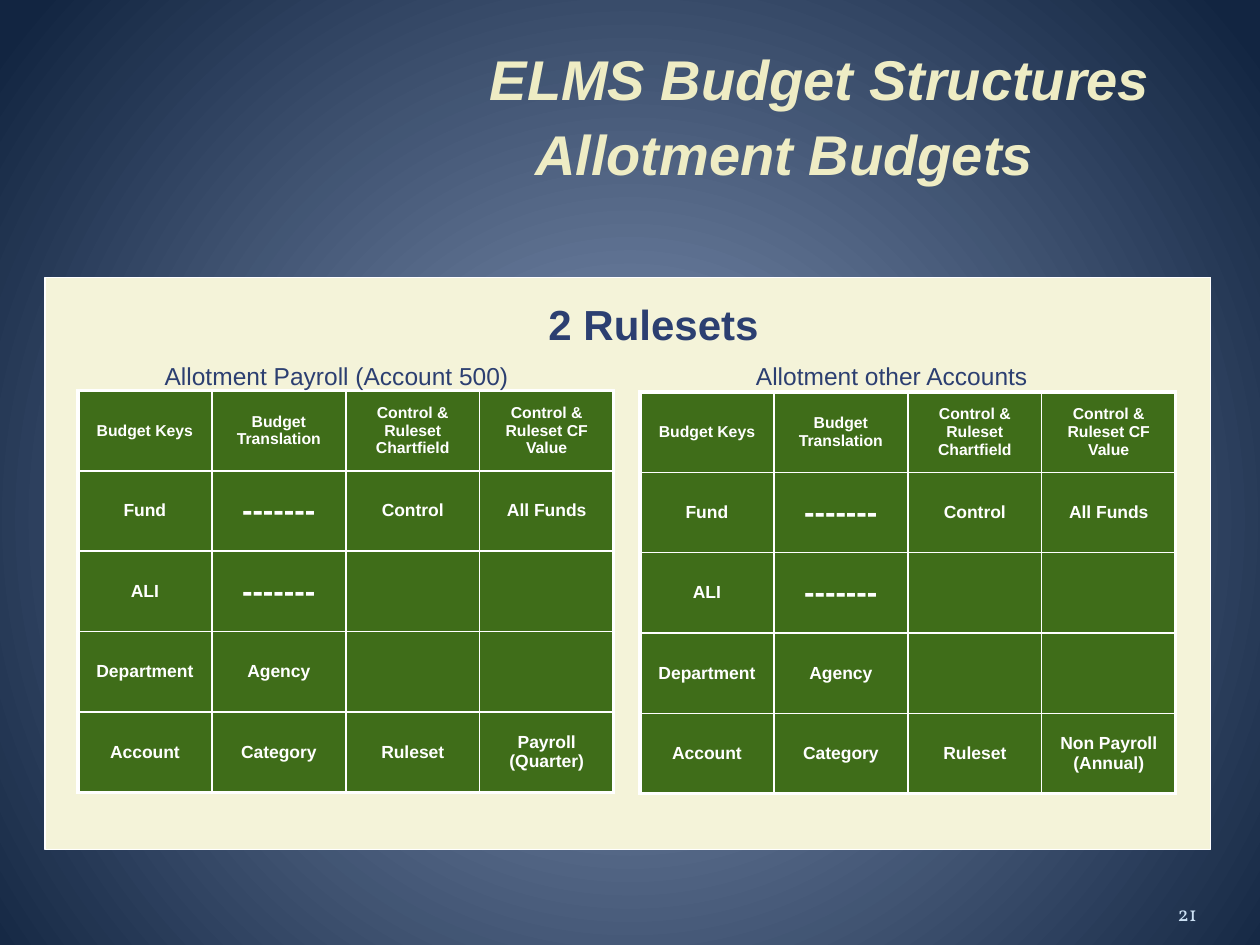
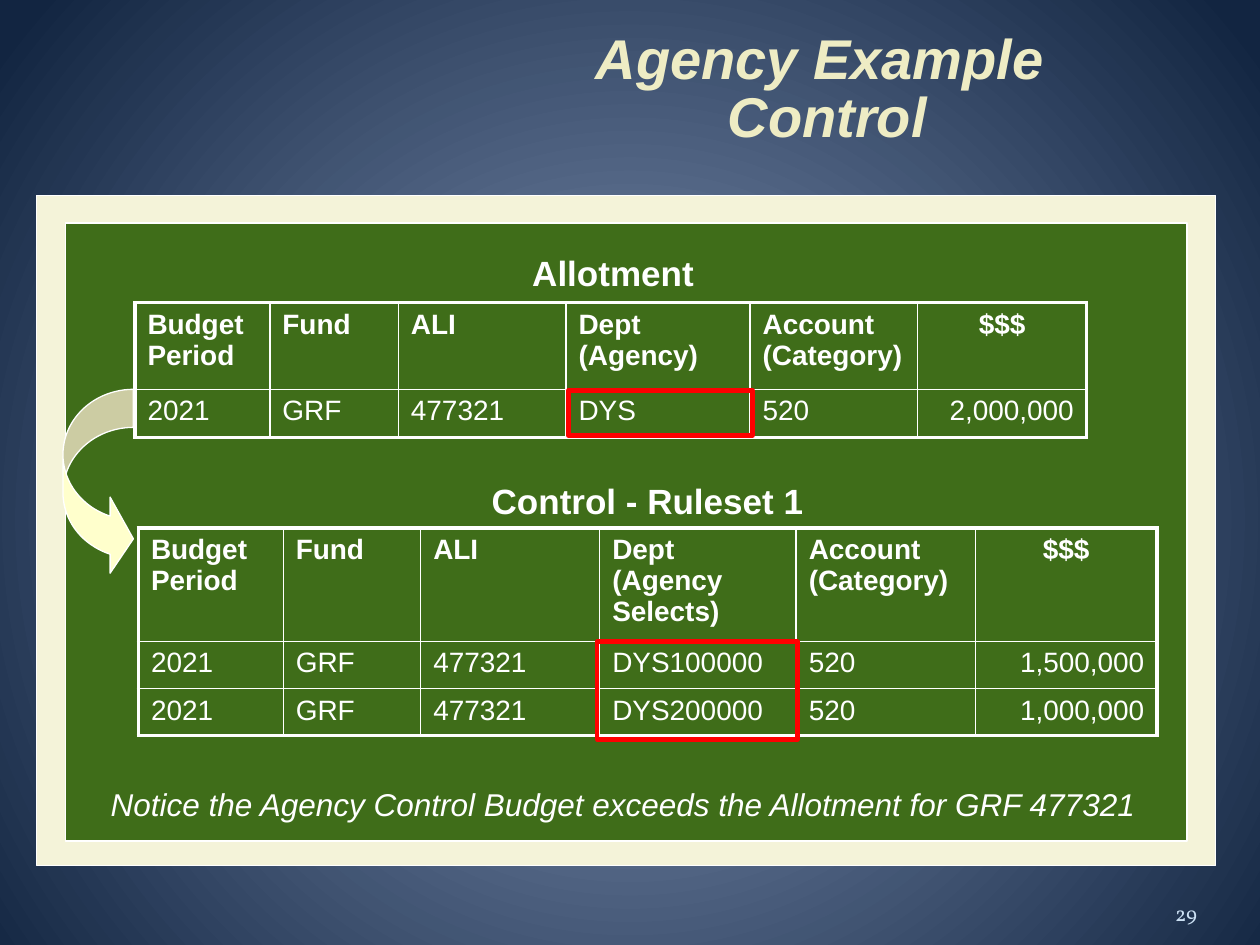
from dataclasses import dataclass

from pptx import Presentation
from pptx.dml.color import RGBColor
from pptx.enum.shapes import MSO_SHAPE
from pptx.enum.text import MSO_ANCHOR, PP_ALIGN
from pptx.oxml import parse_xml
from pptx.oxml.ns import nsdecls
from pptx.util import Cm, Pt


@dataclass(frozen=True)
class Theme:
    cream: str = "F4F3D9"
    green: str = "3F6D19"
    white: str = "FFFFFF"
    navy: str = "2C3F71"
    title: str = "EEECC4"
    number: str = "CCE1F4"
    arrow: str = "FFFFCC"
    red: str = "FF0000"
    backdrop: tuple = ((0, "51DAFF"), (7, "7B85B3"), (14, "7386A7"), (100, "122541"))
    body_font: str = "Arial"
    number_font: str = "Vollkorn"
    title_size: int = 32
    heading_size: int = 24
    caption_size: int = 20
    note_size: int = 18
    figure_size: int = 16
    label_size: int = 14
    number_size: int = 12
    key_size: int = 10
    key_header_size: int = 9
    outer_line: float = 2.25
    inner_line: float = 1
    thin_line: float = 0.75
    mark_line: float = 2.5


def apply(target, values):
    for name, value in values.items():
        setattr(target, name, value)


class Builder:
    def __init__(self, theme):
        self.theme = theme
        self.deck = Presentation()
        apply(self.deck, {"slide_width": Cm(25.4), "slide_height": Cm(19.05)})
        self.page = None

    def new_page(self, number):
        self.page = self.deck.slides.add_slide(self.deck.slide_layouts[6])
        self.page.background.fill.solid()
        solid = self.page.element.xpath("p:cSld/p:bg/p:bgPr/a:solidFill")[0]
        stops = "".join(
            f'<a:gs pos="{place * 1000}"><a:srgbClr val="{color}"/></a:gs>'
            for place, color in self.theme.backdrop)
        gradient = parse_xml(
            f'<a:gradFill {nsdecls("a")} rotWithShape="1"><a:gsLst>{stops}</a:gsLst>'
            '<a:path path="circle"><a:fillToRect l="10000" t="110000" r="10000" b="100000"/>'
            '</a:path></a:gradFill>')
        solid.getparent().replace(solid, gradient)
        self.text(number, (22.02, 17.65, 2.11, 1.02), self.theme.number_size,
                  self.theme.number, PP_ALIGN.RIGHT, MSO_ANCHOR.BOTTOM,
                  {"margin_left": 0, "margin_right": 0, "margin_top": 0, "margin_bottom": 0},
                  name=self.theme.number_font)

    def fill_para(self, para, words, size, color, align, **font):
        para.alignment = align
        span = para.add_run()
        span.text = words
        apply(span.font, {"name": self.theme.body_font, "size": Pt(size), **font})
        span.font.color.rgb = RGBColor.from_string(color)

    def text(self, words, place, size, color, align=PP_ALIGN.LEFT,
             anchor=MSO_ANCHOR.TOP, frame_format=None, **font):
        frame = self.page.shapes.add_textbox(*map(Cm, place)).text_frame
        apply(frame, {"word_wrap": True, "vertical_anchor": anchor, **(frame_format or {})})
        self.fill_para(frame.paragraphs[0], words, size, color, align, **font)

    def title(self, words, place):
        self.text(words, place, self.theme.title_size, self.theme.title,
                  PP_ALIGN.CENTER, MSO_ANCHOR.BOTTOM, bold=True, italic=True)

    def caption(self, words, place):
        self.text(words, place, self.theme.caption_size, self.theme.white,
                  PP_ALIGN.CENTER, bold=True)

    def shape(self, place, fill, line, width, kind=MSO_SHAPE.RECTANGLE, adjustments=()):
        box = self.page.shapes.add_shape(kind, *map(Cm, place))
        box.shadow.inherit = False
        if fill:
            box.fill.solid()
            box.fill.fore_color.rgb = RGBColor.from_string(fill)
        else:
            box.fill.background()
        box.line.color.rgb = RGBColor.from_string(line)
        box.line.width = Pt(width)
        for index, value in enumerate(adjustments):
            box.adjustments[index] = value

    def borders(self, cell, outer_sides):
        properties = cell._tc.get_or_add_tcPr()
        for index, side in enumerate("LRTB"):
            points = self.theme.outer_line if side in outer_sides else self.theme.inner_line
            properties.insert(index, parse_xml(
                f'<a:ln{side} {nsdecls("a")} w="{Pt(points)}"><a:solidFill>'
                f'<a:srgbClr val="{self.theme.white}"/></a:solidFill></a:ln{side}>'))

    def table(self, corner, widths, heights, rows, style, fill=None, anchor=MSO_ANCHOR.TOP):
        frame = self.page.shapes.add_table(
            len(rows), len(widths), *map(Cm, (*corner, sum(widths), sum(heights))))
        table = frame.table
        apply(table, {"first_row": False, "horz_banding": False})
        for column, width in zip(table.columns, widths):
            column.width = Cm(width)
        for line, height in zip(table.rows, heights):
            line.height = Cm(height)
        last_row, last_column = len(rows) - 1, len(widths) - 1
        for r, row in enumerate(rows):
            for c, words in enumerate(row):
                cell = table.cell(r, c)
                cell.vertical_anchor = anchor
                if fill:
                    cell.fill.solid()
                    cell.fill.fore_color.rgb = RGBColor.from_string(fill)
                else:
                    cell.fill.background()
                edges = {"L": c == 0, "R": c == last_column, "T": r == 0, "B": r == last_row}
                self.borders(cell, [side for side, outer in edges.items() if outer])
                if words:
                    size, align, bold = style(r, c, words)
                    self.fill_para(cell.text_frame.paragraphs[0], words, size,
                                   self.theme.white, align, bold=bold)

    def ruleset_table(self, corner, account_value):
        theme = self.theme
        dashes = "-------"
        rows = [
            ("Budget Keys", "Budget Translation", "Control & Ruleset Chartfield",
             "Control & Ruleset CF Value"),
            ("Fund", dashes, "Control", "All Funds"),
            ("ALI", dashes, "", ""),
            ("Department", "Agency", "", ""),
            ("Account", "Category", "Ruleset", account_value),
        ]

        def style(r, c, words):
            size = theme.key_header_size if r == 0 else theme.key_size
            return theme.note_size if words == dashes else size, PP_ALIGN.CENTER, True

        self.table(corner, [2.7] * 4, [1.62] * 5, rows, style, theme.green, MSO_ANCHOR.MIDDLE)

    def budget_table(self, corner, widths, heights, department, entries):
        header = ("Budget Period", "Fund", "ALI", department, "Account (Category)", "$$$")
        rows = [header] + [("2021", "GRF", "477321", code, "520", amount)
                           for code, amount in entries]

        def style(r, c, words):
            amount_align = PP_ALIGN.CENTER if r == 0 else PP_ALIGN.RIGHT
            align = amount_align if c == 5 else PP_ALIGN.LEFT
            return self.theme.figure_size, align, r == 0

        self.table(corner, widths, heights, rows, style)


def build_structures(builder):
    theme = builder.theme
    builder.new_page("21")
    builder.shape((0.91, 5.59, 23.5, 11.53), theme.cream, theme.white, theme.thin_line)
    builder.text("2 Rulesets", (0.97, 5.89, 23.14, 1.27), theme.heading_size, theme.navy,
                 PP_ALIGN.CENTER, MSO_ANCHOR.MIDDLE, {"margin_left": Cm(1.52)}, bold=True)
    builder.title("ELMS Budget Structures", (7.92, 0.64, 17.22, 1.73))
    builder.title("Allotment Budgets", (6.38, 2.41, 18.87, 1.47))
    builder.ruleset_table((1.57, 7.87), "Payroll (Quarter)")
    builder.ruleset_table((12.9, 7.9), "Non Payroll (Annual)")
    for words, left in (("Allotment Payroll (Account 500)", 3.07),
                        ("Allotment other Accounts", 14.99)):
        builder.text(words, (left, 7.16, 8.08, 0.86), theme.label_size, theme.navy)


def build_agency_example(builder):
    theme = builder.theme
    builder.new_page("29")
    builder.shape((0.74, 3.94, 23.77, 13.51), theme.cream, theme.white, theme.thin_line)
    builder.shape((1.32, 4.5, 22.61, 12.45), theme.green, theme.white, theme.inner_line)
    builder.title("Agency Example", (7.92, 0.23, 17.22, 1.73))
    builder.title("Control", (8.08, 1.65, 17.2, 1.47))
    builder.caption("Allotment", (2.72, 4.95, 19.28, 1.09))
    builder.caption("Control - Ruleset 1", (2.87, 9.55, 20.37, 1.09))
    builder.budget_table((2.79, 10.64), (2.92, 2.77, 3.61, 3.96, 3.61, 3.66),
                         (2.29, 0.95, 0.95), "Dept (Agency Selects)",
                         [("DYS100000", "1,500,000"), ("DYS200000", "1,000,000")])
    builder.shape((1.27, 7.85, 1.42, 3.78), theme.arrow, theme.white, theme.thin_line,
                  MSO_SHAPE.CURVED_RIGHT_ARROW, (0.54, 1.08, 0.33))
    builder.budget_table((2.72, 6.1), (2.72, 2.59, 3.38, 3.71, 3.38, 3.4),
                         (1.75, 0.97), "Dept (Agency)", [("DYS", "2,000,000")])
    for place in ((11.46, 7.87, 3.71, 0.91), (12.04, 12.93, 4.04, 1.98)):
        builder.shape(place, None, theme.red, theme.mark_line)
    builder.text("Notice the Agency Control Budget exceeds the Allotment for GRF 477321",
                 (1.98, 15.7, 21.26, 1.02), theme.note_size, theme.white, italic=True)


def main():
    builder = Builder(Theme())
    build_structures(builder)
    build_agency_example(builder)
    builder.deck.save("out.pptx")


if __name__ == "__main__":
    main()
